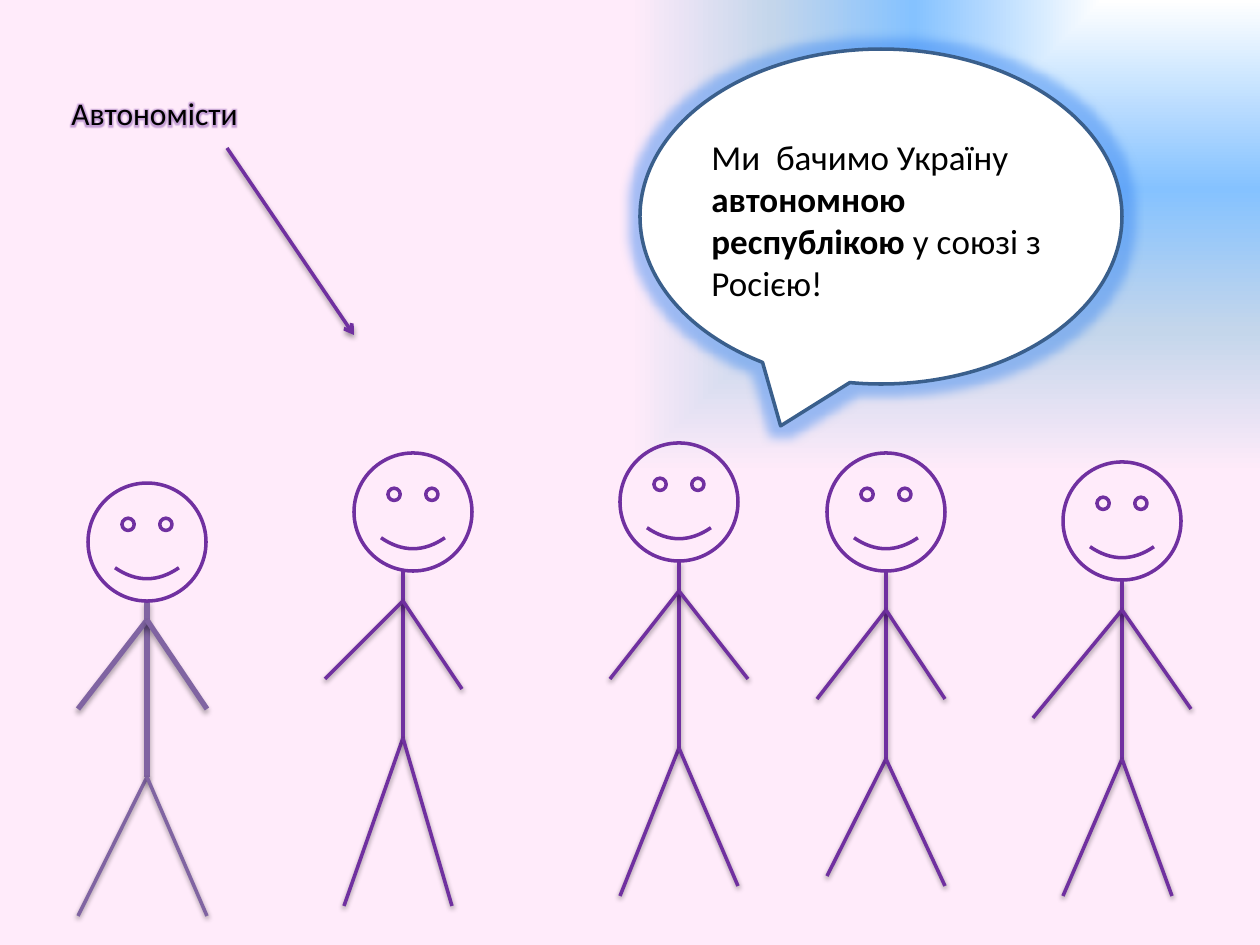
"""Build a slide of stick figures, one of them speaking about autonomy."""
from dataclasses import dataclass

from lxml import etree
from pptx import Presentation
from pptx.dml.color import RGBColor
from pptx.enum.shapes import MSO_CONNECTOR, MSO_SHAPE
from pptx.enum.text import MSO_AUTO_SIZE
from pptx.oxml import parse_xml
from pptx.oxml.ns import nsdecls, qn
from pptx.util import Emu, Pt

STRAIGHT = MSO_CONNECTOR.STRAIGHT
SMILEY = MSO_SHAPE.SMILEY_FACE
CALLOUT = MSO_SHAPE.OVAL_CALLOUT
FIT_SHAPE = MSO_AUTO_SIZE.SHAPE_TO_FIT_TEXT

PURPLE = RGBColor(0x70, 0x30, 0xA0)
LAVENDER = RGBColor(0x80, 0x64, 0xA2)
NAVY = RGBColor(0x3A, 0x5F, 0x8C)
SKY = RGBColor(0x3B, 0x86, 0xF0)
BLACK = RGBColor(0, 0, 0)
WHITE = RGBColor(255, 255, 255)
BACKGROUND_STOPS = (
    (0, WHITE),
    (40, RGBColor(0x85, 0xC2, 0xFF)),
    (70, RGBColor(0xC4, 0xD6, 0xEB)),
    (100, RGBColor(0xFF, 0xEB, 0xFA)),
)

FONT = "Calibri"
PX_PER_INCH = 126
HEAD_SIZE = 118

Point = tuple[int, int]


@dataclass(frozen=True)
class Figure:
    head: Point
    neck: Point
    shoulder: int
    hip: int
    hands: tuple[Point, Point]
    feet: tuple[Point, Point]
    color: RGBColor = PURPLE
    body_width: int = 2


@dataclass(frozen=True)
class Span:
    text: str
    bold: bool = False


FIGURES = (
    Figure((88, 483), (147, 601), 620, 777, ((78, 709), (207, 709)),
           ((78, 916), (207, 916)), LAVENDER, 3),
    Figure((354, 453), (403, 571), 601, 738, ((325, 679), (462, 689)),
           ((344, 906), (452, 906))),
    Figure((620, 443), (679, 561), 591, 748, ((610, 679), (748, 679)),
           ((620, 896), (738, 886))),
    Figure((827, 453), (886, 571), 610, 759, ((817, 699), (945, 699)),
           ((827, 876), (945, 886))),
    Figure((1063, 462), (1122, 581), 610, 759, ((1033, 718), (1191, 709)),
           ((1063, 896), (1172, 896))),
)
SPEECH = (
    Span("Ми  бачимо Україну "),
    Span("автономною республікою ", True),
    Span("у союзі з Росією!"),
)


def px(value: int) -> Emu:
    """Turn pixels into EMU."""
    return Emu(round(value * 914400 / PX_PER_INCH))


def glow(color: RGBColor, radius: float, opacity: int) -> etree._Element:
    """Return a glow effect with its radius in points."""
    return parse_xml(
        f'<a:effectLst {nsdecls("a")}><a:glow rad="{Pt(radius)}">'
        f'<a:srgbClr val="{color}"><a:alpha val="{opacity * 1000}"/></a:srgbClr>'
        "</a:glow></a:effectLst>"
    )


def line_shadow(width: int) -> etree._Element:
    """Return the soft shadow that falls below a line."""
    distance, opacity = (1.8, 35) if width == 3 else (1.6, 38)
    return parse_xml(
        f'<a:effectLst {nsdecls("a")}><a:outerShdw blurRad="{Pt(3.1)}" '
        f'dist="{Pt(distance)}" dir="5400000" rotWithShape="0">'
        f'<a:srgbClr val="{BLACK}"><a:alpha val="{opacity * 1000}"/></a:srgbClr>'
        "</a:outerShdw></a:effectLst>"
    )


def paint_background(page) -> None:
    """Fill the page with a gradient that spreads from the top right corner."""
    fill = page.background.fill
    fill.solid()
    fill.fore_color.rgb = WHITE
    stops = "".join(
        f'<a:gs pos="{position * 1000}"><a:srgbClr val="{color}"/></a:gs>'
        for position, color in BACKGROUND_STOPS
    )
    gradient = parse_xml(
        f'<a:gradFill {nsdecls("a")} rotWithShape="1"><a:gsLst>{stops}</a:gsLst>'
        '<a:path path="rect"><a:fillToRect l="100000" b="100000"/></a:path>'
        "</a:gradFill>"
    )
    solid = next(page.background._cSld.iter(qn("a:solidFill")))
    solid.getparent().replace(solid, gradient)


def add_line(page, start: Point, end: Point, color: RGBColor = PURPLE,
             width: int = 2, arrow: bool = False) -> None:
    """Draw a shadowed straight line."""
    line = page.shapes.add_connector(STRAIGHT, *map(px, start + end))
    line.line.color.rgb = color
    line.line.width = Pt(width)
    if arrow:
        etree.SubElement(line.line._get_or_add_ln(), qn("a:tailEnd"), type="arrow")
    line._element.spPr.append(line_shadow(width))


def add_figure(page, figure: Figure) -> None:
    """Draw a smiling stick figure."""
    center, _ = figure.neck
    shoulder, hip = (center, figure.shoulder), (center, figure.hip)
    add_line(page, figure.neck, hip, figure.color, figure.body_width)
    for hand in figure.hands:
        add_line(page, shoulder, hand, figure.color, figure.body_width)
    for foot in figure.feet:
        add_line(page, hip, foot, figure.color)
    head = page.shapes.add_shape(
        SMILEY, *map(px, figure.head), px(HEAD_SIZE), px(HEAD_SIZE))
    head.shadow.inherit = False
    head.fill.background()
    head.line.color.rgb = PURPLE
    head.line.width = Pt(2)


def add_callout(page) -> None:
    """Draw the glowing speech bubble."""
    bubble = page.shapes.add_shape(CALLOUT, *map(px, (640, 49, 482, 335)))
    bubble.shadow.inherit = False
    bubble.fill.solid()
    bubble.fill.fore_color.rgb = WHITE
    bubble.line.color.rgb = NAVY
    bubble.line.width = Pt(2)
    effects = bubble._element.spPr.find(qn("a:effectLst"))
    effects.getparent().replace(effects, glow(SKY, 11, 45))


def add_text(page, frame: tuple[int, int, int, int], spans: tuple[Span, ...],
             size: int, glowing: bool = False) -> None:
    """Write one paragraph in a text box."""
    box = page.shapes.add_textbox(*map(px, frame))
    box.text_frame.word_wrap = True
    box.text_frame.auto_size = FIT_SHAPE
    para = box.text_frame.paragraphs[0]
    for span in spans:
        run = para.add_run()
        run.text = span.text
        run.font.size = Pt(size)
        run.font.bold = span.bold
        run.font.name = FONT
        run.font.color.rgb = BLACK
        if glowing:
            fill = run._r.rPr.find(qn("a:solidFill"))
            fill.addnext(glow(PURPLE, 5, 40))


def main() -> None:
    """Build and save the deck."""
    deck = Presentation()
    deck.slide_width, deck.slide_height = px(1260), px(945)
    page = deck.slides.add_slide(deck.slide_layouts[6])
    paint_background(page)
    for figure in FIGURES:
        add_figure(page, figure)
    add_line(page, (227, 148), (354, 335), arrow=True)
    add_text(page, (59, 88, 394, 50), (Span("Автономісти"),), 18, glowing=True)
    add_callout(page)
    add_text(page, (699, 129, 394, 183), SPEECH, 20)
    deck.save("out.pptx")


if __name__ == "__main__":
    main()
